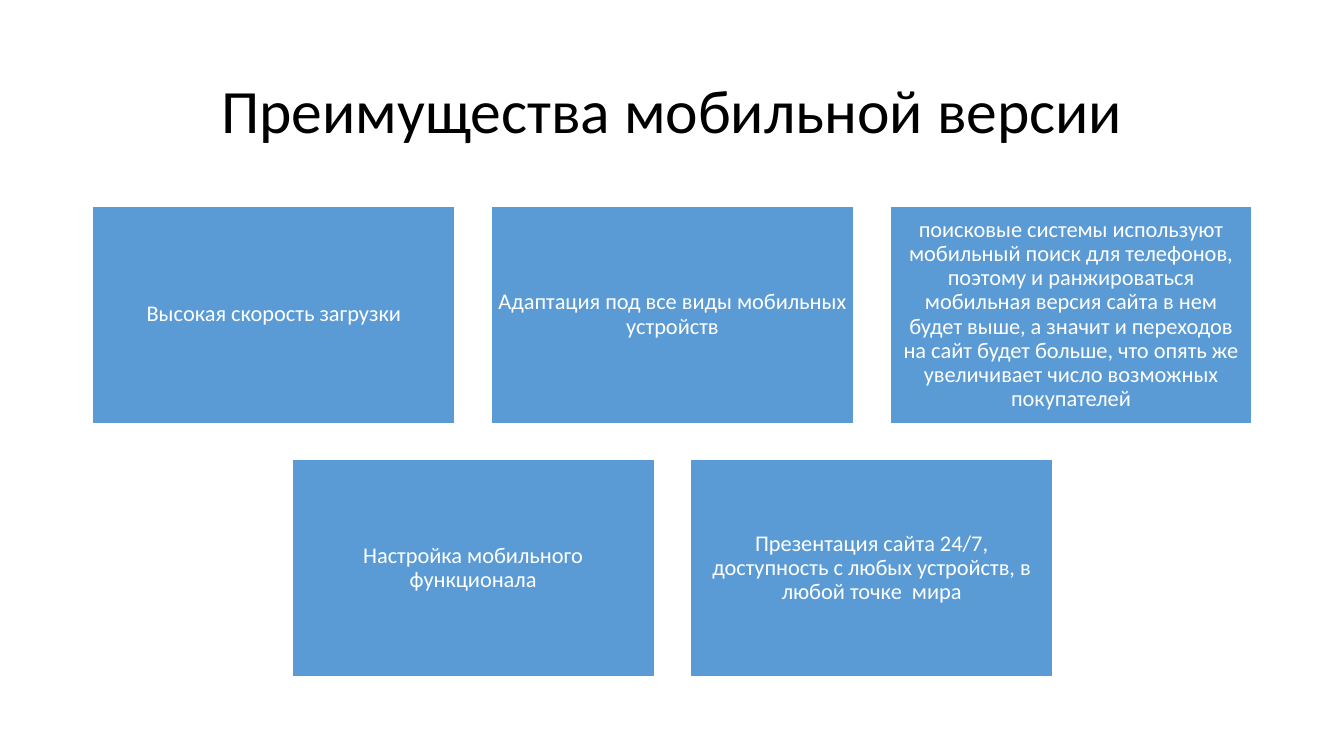
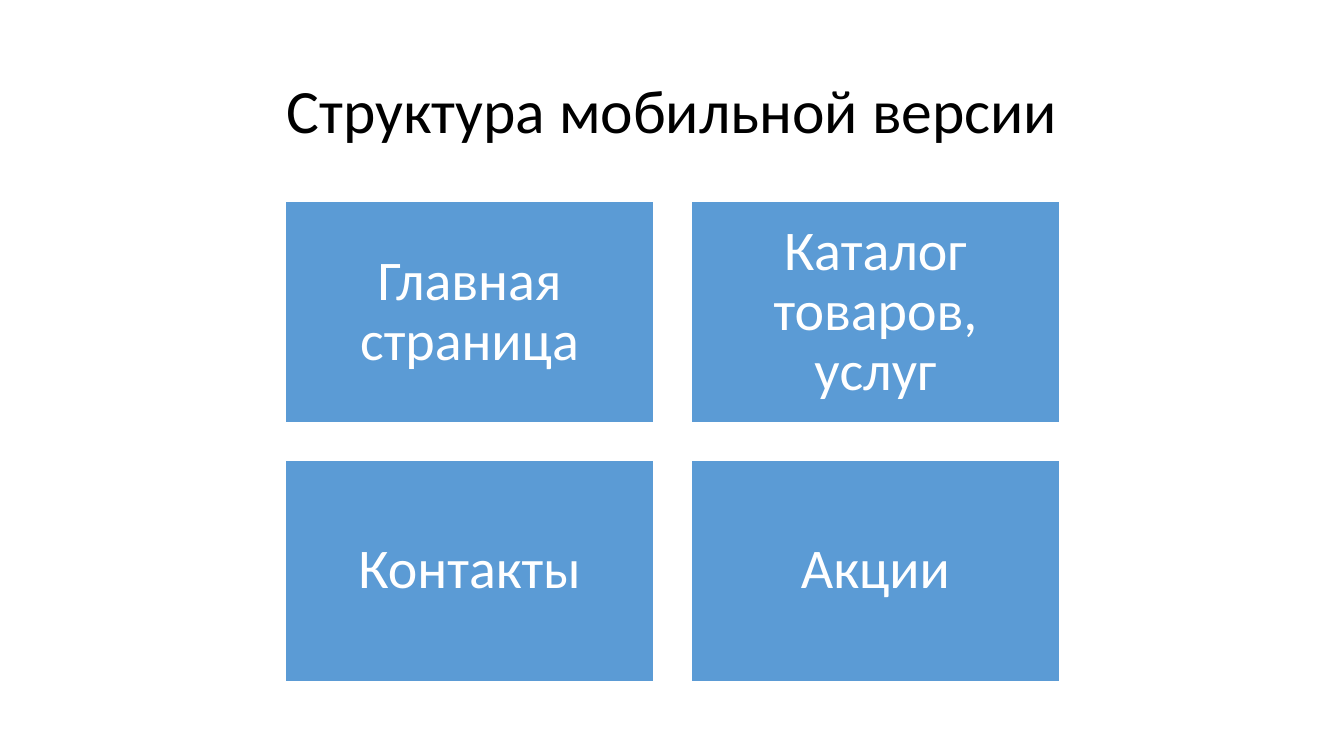
from dataclasses import dataclass

from pptx import Presentation
from pptx.dml.color import RGBColor
from pptx.enum.shapes import MSO_SHAPE
from pptx.enum.text import MSO_ANCHOR, PP_ALIGN
from pptx.util import Inches, Pt

SLIDES = [
    {
        "title": "Преимущества мобильной версии",
        "card_width": Inches(11.5 / 3.2),  # three cards and two gaps
        "size": 16,
        "rows": [
            [
                "Высокая скорость загрузки",
                "Адаптация под все виды мобильных устройств",
                "поисковые системы используют мобильный поиск для телефонов, "
                "поэтому и ранжироваться мобильная версия сайта в нем будет выше, "
                "а значит и переходов на сайт будет больше, что опять же "
                "увеличивает число возможных покупателей",
            ],
            [
                "Настройка мобильного функционала",
                "Презентация сайта 24/7, доступность с любых устройств, "
                "в любой точке  мира",
            ],
        ],
    },
    {
        "title": "Структура мобильной версии",
        "card_width": Inches(3.66),
        "size": 40,
        "rows": [
            ["Главная страница", "Каталог товаров, услуг"],
            ["Контакты", "Акции"],
        ],
    },
]


@dataclass(frozen=True)
class Theme:
    font: str = "Calibri"
    title_size: int = 44
    title_color: RGBColor = RGBColor(0x00, 0x00, 0x00)
    card_fill: RGBColor = RGBColor(0x5B, 0x9B, 0xD5)
    white: RGBColor = RGBColor(0xFF, 0xFF, 0xFF)
    line_spacing: float = 0.9


THEME = Theme()
TITLE_BOX = Inches(0.92), Inches(0.4), Inches(11.5), Inches(1.45)
GRID_CENTER_X, GRID_CENTER_Y = Inches(6.67), Inches(4.38)
HEIGHT_RATIO = 0.6  # card height to card width
GAP_RATIO = 0.1  # gap to card width
INSET_RATIO = 0.3  # text margin to type size


def set_text(shape, text, *, size, color, inset=None):
    tf = shape.text_frame
    tf.word_wrap = True
    tf.vertical_anchor = MSO_ANCHOR.MIDDLE
    if inset is not None:
        tf.margin_left = tf.margin_right = inset
        tf.margin_top = tf.margin_bottom = inset
    p = tf.paragraphs[0]
    p.alignment = PP_ALIGN.CENTER
    p.line_spacing = THEME.line_spacing
    r = p.add_run()
    r.text = text
    r.font.name = THEME.font
    r.font.size = Pt(size)
    r.font.color.rgb = color


def add_card(s, text, box, size):
    sp = s.shapes.add_shape(MSO_SHAPE.RECTANGLE, *box)
    sp.shadow.inherit = False
    sp.fill.solid()
    sp.fill.fore_color.rgb = THEME.card_fill
    sp.line.color.rgb = THEME.white
    sp.line.width = Pt(1)
    set_text(sp, text, size=size, color=THEME.white, inset=Pt(size * INSET_RATIO))


def centered_starts(count, length, gap, center):
    """Start of each of count equal parts, spread evenly around center."""
    first = center - (count * length + (count - 1) * gap) / 2
    return [round(first + i * (length + gap)) for i in range(count)]


def add_card_grid(s, rows, width, size):
    height, gap = round(width * HEIGHT_RATIO), round(width * GAP_RATIO)
    tops = centered_starts(len(rows), height, gap, GRID_CENTER_Y)
    for top, row in zip(tops, rows):
        lefts = centered_starts(len(row), width, gap, GRID_CENTER_X)
        for left, text in zip(lefts, row):
            add_card(s, text, (left, top, width, height), size)


def main():
    prs = Presentation()
    prs.slide_width, prs.slide_height = Inches(13.33), Inches(7.5)
    for content in SLIDES:
        s = prs.slides.add_slide(prs.slide_layouts[6])
        set_text(s.shapes.add_textbox(*TITLE_BOX), content["title"],
                 size=THEME.title_size, color=THEME.title_color)
        add_card_grid(s, content["rows"], content["card_width"], content["size"])
    prs.save("out.pptx")


if __name__ == "__main__":
    main()
